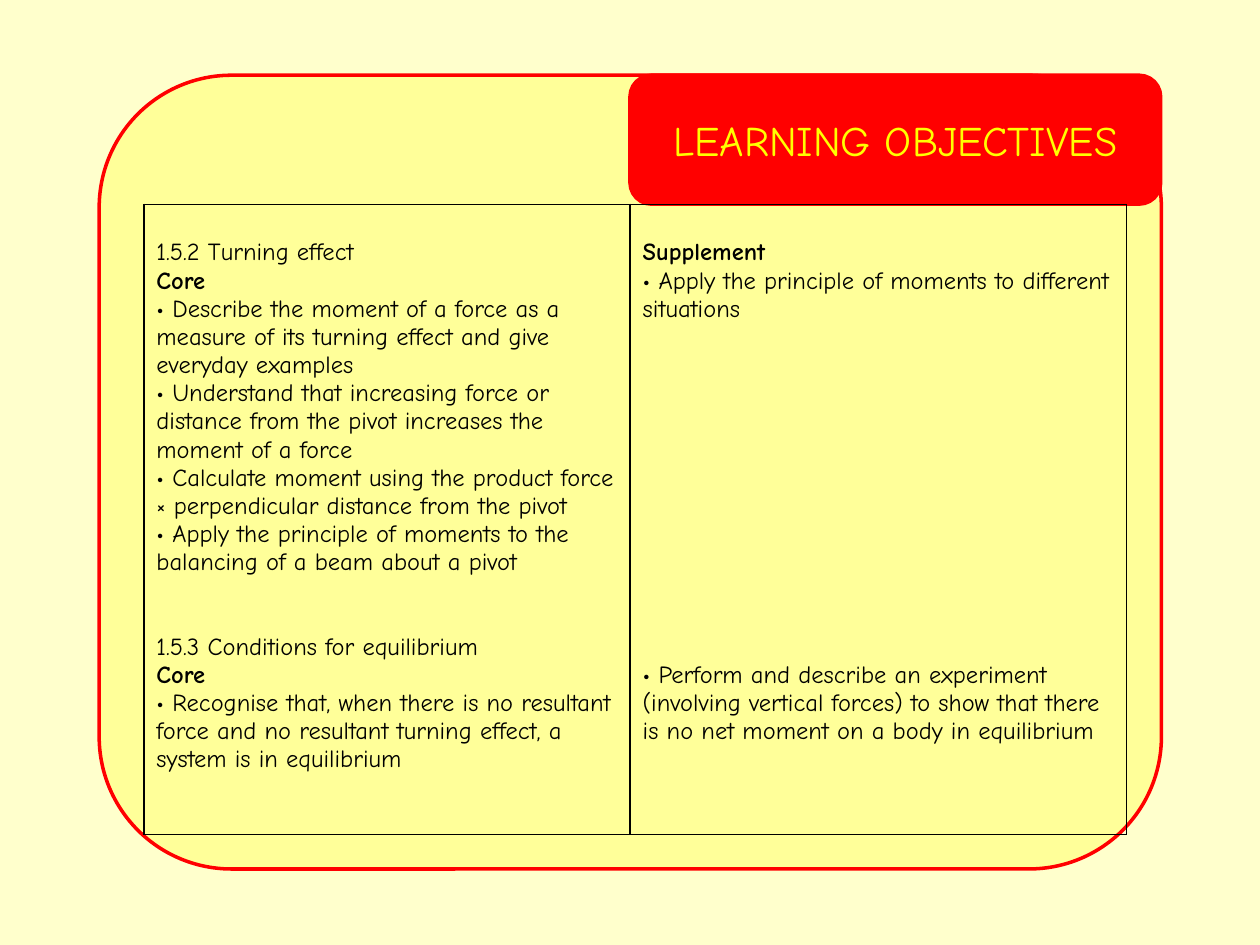
"""Build the learning objectives slide on turning effect and equilibrium."""
from lxml import etree
from pptx import Presentation
from pptx.dml.color import RGBColor
from pptx.enum.shapes import MSO_SHAPE
from pptx.enum.text import MSO_ANCHOR, PP_ALIGN
from pptx.oxml.ns import qn
from pptx.util import Pt

RECTANGLE, ROUNDED = MSO_SHAPE.RECTANGLE, MSO_SHAPE.ROUNDED_RECTANGLE
CENTER, LEFT = PP_ALIGN.CENTER, PP_ALIGN.LEFT
MIDDLE, TOP = MSO_ANCHOR.MIDDLE, MSO_ANCHOR.TOP
CREAM = RGBColor(0xFF, 0xFF, 0xCC)
PALE_YELLOW = RGBColor(0xFF, 0xFF, 0x99)
YELLOW = RGBColor(0xFF, 0xFF, 0x00)
RED = RGBColor(0xFF, 0x00, 0x00)
BLACK = RGBColor(0x00, 0x00, 0x00)
FONT = "Comic Neue"
LINE_HEIGHT = 16.08
SLIDE_SIZE = (720, 540)

TITLE = "LEARNING OBJECTIVES"
BOLD_HEADINGS = ("Core", "Supplement")
PANELS = {
    "background": (RECTANGLE, (0, 0, *SLIDE_SIZE), CREAM, None),
    "frame": (ROUNDED, (56.7, 43, 607, 453.6), PALE_YELLOW, RED),
    "title": (ROUNDED, (360, 43, 303.3, 73.7), RED, RED),
}
TABLE_BOX = (82.2, 116.8, 561.6, 360)
COLUMN_WIDTHS = (277.9, 283.7)
OBJECTIVES = [
    [
        (0, "1.5.2 Turning effect"),
        (0, "Core"),
        (0, "• Describe the moment of a force as a measure of its turning effect and give everyday examples"),
        (0, "• Understand that increasing force or distance from the pivot increases the moment of a force"),
        (0, "• Calculate moment using the product force × perpendicular distance from the pivot"),
        (0, "• Apply the principle of moments to the balancing of a beam about a pivot"),
        (2, "1.5.3 Conditions for equilibrium"),
        (0, "Core"),
        (0, "• Recognise that, when there is no resultant force and no resultant turning effect, a system is in equilibrium"),
    ],
    [
        (0, "Supplement"),
        (0, "• Apply the principle of moments to different situations"),
        (12, "• Perform and describe an experiment (involving vertical forces) to show that there is no net moment on a body in equilibrium"),
    ],
]


def write(paragraph, text, size, color, alignment, bold=False):
    paragraph.alignment = alignment
    run = paragraph.add_run()
    run.text = text
    formats = {"name": FONT, "size": Pt(size), "bold": bold}
    for name, value in formats.items():
        setattr(run.font, name, value)
    run.font.color.rgb = color


def add_panel(slide, kind, box, fill, line):
    shape = slide.shapes.add_shape(kind, *map(Pt, box))
    shape.shadow.inherit = False
    shape.fill.solid()
    shape.fill.fore_color.rgb = fill
    if line is None:
        shape.line.fill.background()
    else:
        shape.line.color.rgb = line
        shape.line.width = Pt(2)
    return shape


def add_borders(cell):
    properties = cell._tc.get_or_add_tcPr()
    for position, side in enumerate(("lnL", "lnR", "lnT", "lnB")):
        border = etree.Element(qn(f"a:{side}"), w=str(Pt(1)))
        fill = etree.SubElement(border, qn("a:solidFill"))
        etree.SubElement(fill, qn("a:srgbClr"), val=str(BLACK))
        properties.insert(position, border)


def fill_cell(cell, objectives):
    cell.fill.background()
    cell.vertical_anchor = TOP
    cell.margin_top = Pt(3.6 + LINE_HEIGHT)
    add_borders(cell)
    frame = cell.text_frame
    for index, (gap_lines, text) in enumerate(objectives):
        paragraph = frame.add_paragraph() if index else frame.paragraphs[0]
        paragraph.space_before = Pt(gap_lines * LINE_HEIGHT)
        write(paragraph, text, 14, BLACK, LEFT, text in BOLD_HEADINGS)


def add_objectives(slide):
    table = slide.shapes.add_table(1, len(OBJECTIVES), *map(Pt, TABLE_BOX)).table
    table.first_row = table.horz_banding = False
    for column, width in zip(table.columns, COLUMN_WIDTHS):
        column.width = Pt(width)
    for index, objectives in enumerate(OBJECTIVES):
        fill_cell(table.cell(0, index), objectives)


def main():
    presentation = Presentation()
    presentation.slide_width, presentation.slide_height = map(Pt, SLIDE_SIZE)
    slide = presentation.slides.add_slide(presentation.slide_layouts[6])
    panels = {name: add_panel(slide, *panel) for name, panel in PANELS.items()}
    title_frame = panels["title"].text_frame
    title_frame.vertical_anchor = MIDDLE
    write(title_frame.paragraphs[0], TITLE, 24, YELLOW, CENTER)
    add_objectives(slide)
    presentation.save("out.pptx")


if __name__ == "__main__":
    main()
